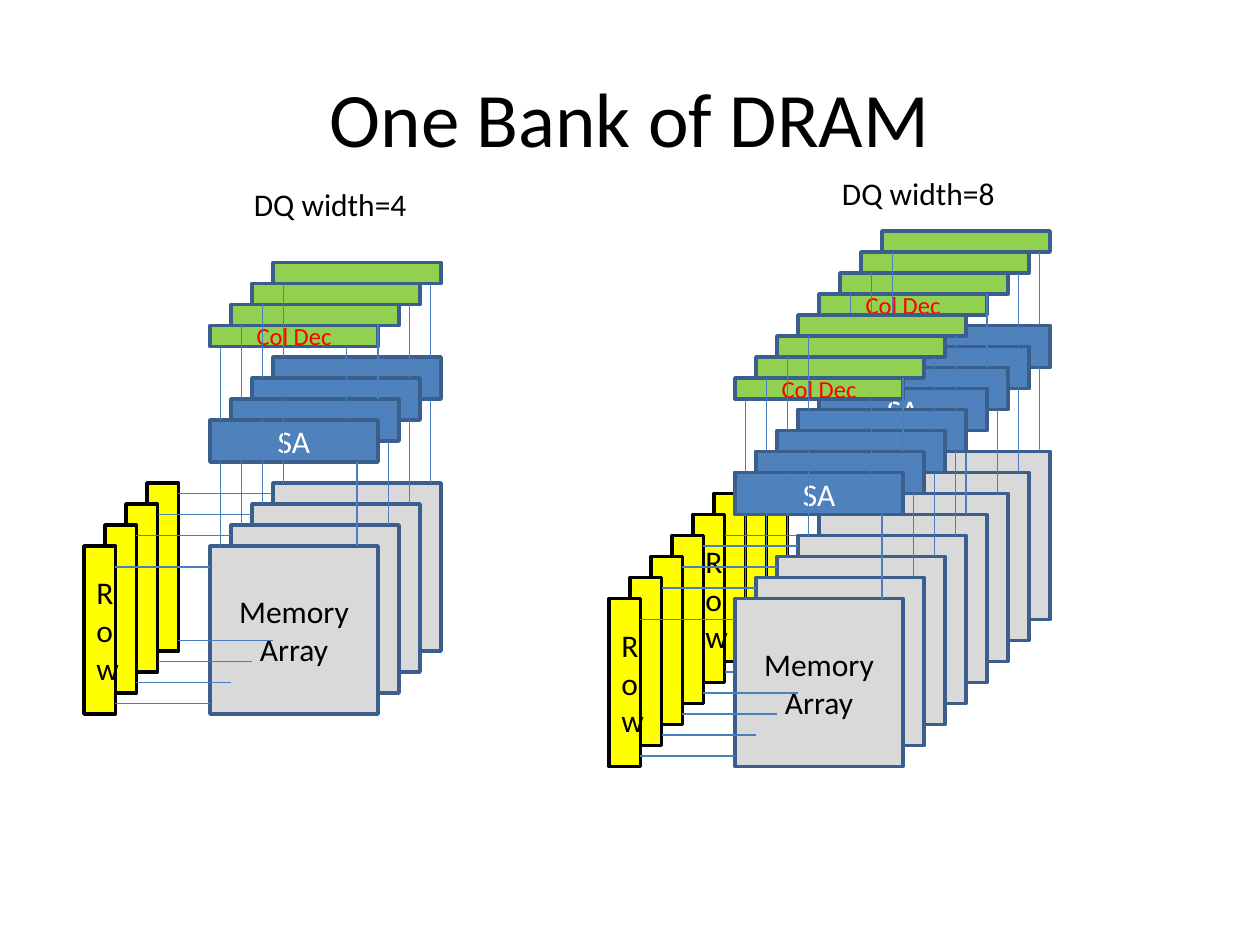
from lxml.etree import SubElement
from pptx import Presentation
from pptx.dml.color import RGBColor
from pptx.enum.shapes import MSO_CONNECTOR as Connector, MSO_SHAPE as Shape
from pptx.enum.text import MSO_ANCHOR as Anchor, MSO_AUTO_SIZE as AutoSize, PP_ALIGN as Align
from pptx.oxml.ns import qn
from pptx.util import Inches, Pt

# Content: lengths are in grid units, 12 to the inch
UNITS_PER_INCH = 12
LAYERS, STEP = 4, 2  # each layer behind moves right and up by STEP

COLORS = {
    "array": "D9D9D9", "amp": "4F81BD", "decoder": "92D050", "row": "FFFF00",
    "border": "3A5F8C", "wire": "4B7EBC",
    "black": "000000", "white": "FFFFFF", "red": "FF0000",
}

# Text, box, size, alignment, wrap
TEXTS = [
    ("One Bank of DRAM", (6, 3.6, 108, 15), 44, Align.CENTER, True),
    ("DQ width=4", (23, 17, 17.2, 4.8), 18, Align.LEFT, False),
    ("DQ width=8", (79, 16, 17.2, 4.8), 18, Align.LEFT, False),
]

# Front memory array corner of each bank, and layers whose row wires show
BANKS = [((20, 52), 4), ((78, 49), 1), ((70, 57), 4)]

# Box (x, y, width, height) is relative to the front memory array corner
PARTS = {
    "array": dict(box=(0, 0, 16, 16), text="Memory\nArray", size=18, color="black", border="border"),
    "row": dict(box=(-12, 0, 3, 16), text="Row", size=18, color="black", border="black"),
    "amp": dict(box=(0, -12, 16, 4), text="SA", size=18, color="white", border="border"),
    "decoder": dict(box=(0, -21, 16, 2), text="Col Dec", size=14, color="red", border="border"),
}

# Wire positions by layer, front to back
LEFT_WIRES = (1, 3, 5, 7)
ARRAY_TO_AMP = (LEFT_WIRES, (14, 17, 19, 21), (0, -8))
AMP_TO_DECODER = (LEFT_WIRES, (13, 16, 19, 21), (-12, -19))
ROW_WIRES = ((2, -1, -3, -5), (15, 13, 11, 9))
ROW_SPAN = (-9, 0)

presentation = Presentation()
presentation.slide_width, presentation.slide_height = Inches(10), Inches(7.5)
slide = presentation.slides.add_slide(presentation.slide_layouts[6])


def grid(*values):
    return [Inches(value / UNITS_PER_INCH) for value in values]


def write(shape, text, size, color, align, frame_format):
    frame = shape.text_frame
    frame.text = text
    for name, value in frame_format.items():
        setattr(frame, name, value)
    for paragraph in frame.paragraphs:
        paragraph.alignment = align
        font_format = {"name": "Calibri", "size": Pt(size)}
        for name, value in font_format.items():
            setattr(paragraph.font, name, value)
        paragraph.font.color.rgb = RGBColor.from_string(COLORS[color])


def add_wire(x1, y1, x2, y2):
    wire = slide.shapes.add_connector(Connector.STRAIGHT, *grid(x1, y1, x2, y2))
    wire.line.color.rgb = RGBColor.from_string(COLORS["wire"])
    wire.line.width = Pt(0.75)
    SubElement(wire._element.spPr, qn("a:effectLst"))


def add_stack(kind, left, top):
    part = PARTS[kind]
    x, y, width, height = part["box"]
    for layer in reversed(range(LAYERS)):
        shift = layer * STEP
        box = grid(left + x + shift, top + y - shift, width, height)
        shape = slide.shapes.add_shape(Shape.RECTANGLE, *box)
        shape.shadow.inherit = False
        shape.fill.solid()
        shape.fill.fore_color.rgb = RGBColor.from_string(COLORS[kind])
        shape.line.color.rgb = RGBColor.from_string(COLORS[part["border"]])
        shape.line.width = Pt(2)
        if layer == 0:
            write(shape, part["text"], part["size"], part["color"], Align.CENTER,
                  {"vertical_anchor": Anchor.MIDDLE, "word_wrap": True})


def add_column_wires(wires, left, top):
    *sides, (start, end) = wires
    for side in sides:
        for layer, x in enumerate(side):
            shift = layer * STEP
            add_wire(left + x, top + start - shift, left + x, top + end - shift)


def add_row_wires(left, top, visible):
    start, end = ROW_SPAN
    for side in ROW_WIRES:
        for layer, y in enumerate(side[:visible]):
            shift = layer * STEP
            add_wire(left + start + shift, top + y, left + end + shift, top + y)


# Banks, from back to front
for (left, top), visible_rows in BANKS:
    add_stack("array", left, top)
    add_stack("row", left, top)
    add_row_wires(left, top, visible_rows)
    add_stack("amp", left, top)
    add_stack("decoder", left, top)
    for wires in (ARRAY_TO_AMP, AMP_TO_DECODER):
        add_column_wires(wires, left, top)

# Title and bank captions
for text, box, size, align, wrap in TEXTS:
    text_box = slide.shapes.add_textbox(*grid(*box))
    write(text_box, text, size, "black", align, {
        "word_wrap": wrap,
        "vertical_anchor": Anchor.MIDDLE if wrap else Anchor.TOP,
        "auto_size": AutoSize.NONE if wrap else AutoSize.SHAPE_TO_FIT_TEXT,
    })

presentation.save("out.pptx")
